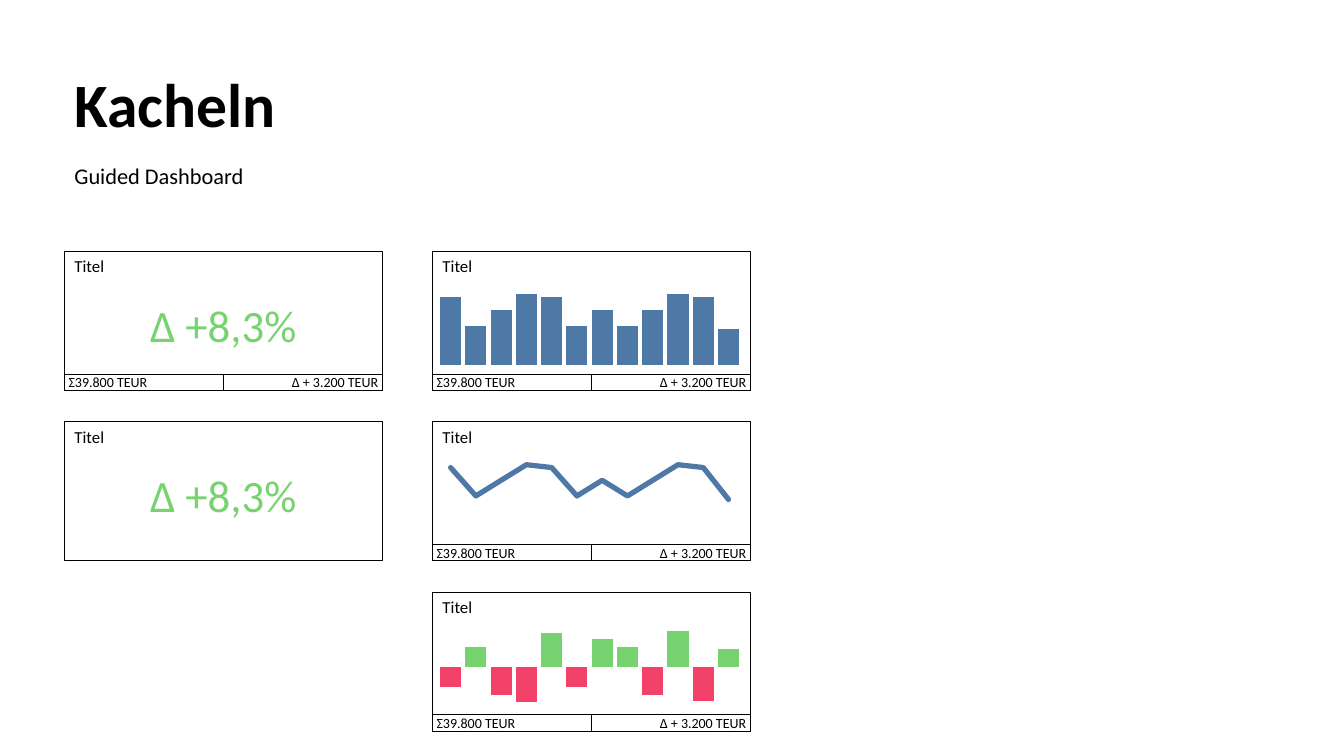
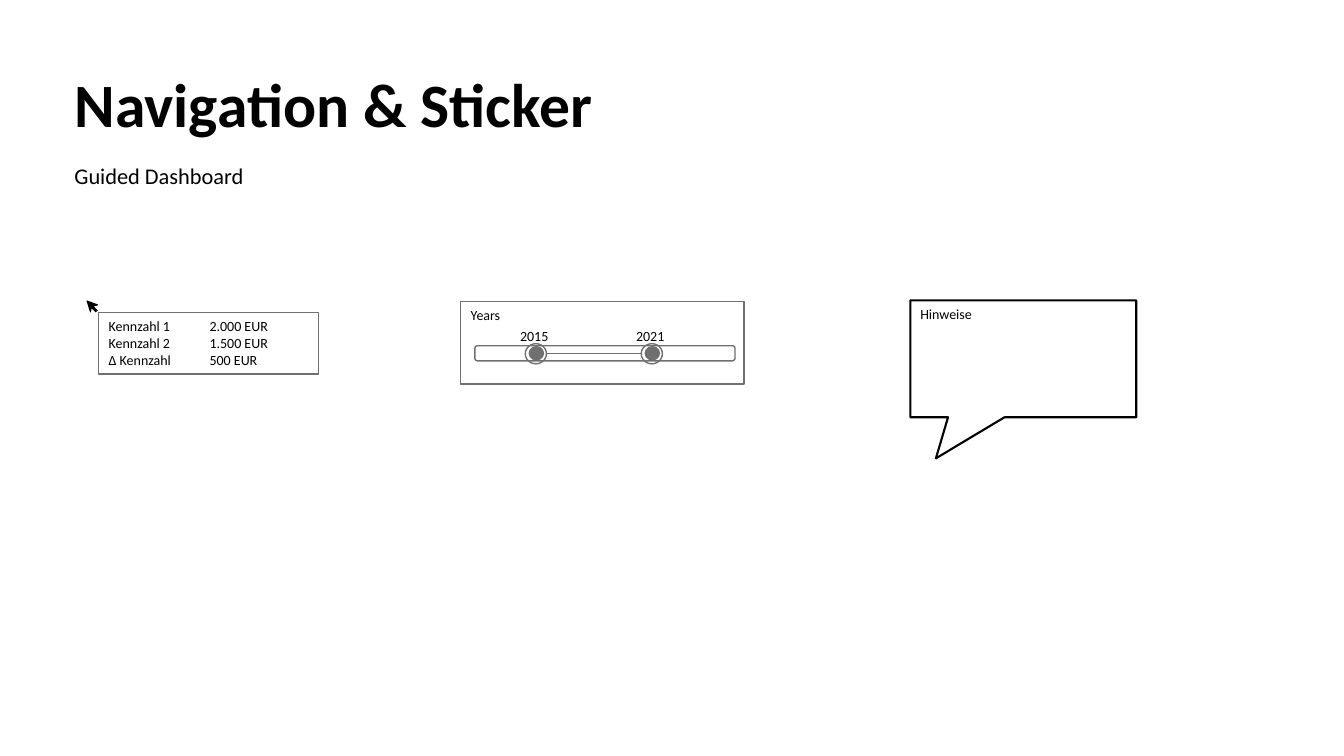
from dataclasses import dataclass
from typing import Any, Optional

import lxml.etree
import pptx
import pptx.chart.data
import pptx.dml.color
import pptx.enum.chart
import pptx.enum.dml
import pptx.enum.shapes
import pptx.enum.text
import pptx.oxml.ns
import pptx.util
from pptx.util import Inches

Preset = pptx.enum.shapes.MSO_SHAPE
ChartType = pptx.enum.chart.XL_CHART_TYPE
Align = pptx.enum.text.PP_ALIGN
Anchor = pptx.enum.text.MSO_ANCHOR
qn = pptx.oxml.ns.qn


# Shared look
@dataclass(frozen=True)
class Theme:
    font: str = "Calibri"
    black: str = "000000"
    white: str = "FFFFFF"
    gray: str = "707070"
    blue: str = "4E79A7"
    green: str = "77D36F"
    red: str = "F24269"
    title_size: float = 44
    subtitle_size: float = 16
    tile_size: float = 12
    small_size: float = 10
    value_size: float = 32
    hairline: float = 0.25
    thin_line: float = 1
    callout_line: float = 1.5
    chart_line: float = 3.75


THEME = Theme()
SUBTITLE = "Guided Dashboard"
TITLE_TOP, SUBTITLE_TOP = 0.75, 1.59
HEADING_LEFT, HEADING_WIDTH = 0.64, 11.5


@dataclass(frozen=True)
class Box:
    left: float
    top: float
    width: float
    height: float

    def lengths(self) -> tuple:
        return tuple(Inches(value) for value in (self.left, self.top, self.width, self.height))


@dataclass(frozen=True)
class TileChart:
    kind: Any
    values: tuple
    color: str
    negative_color: str
    minimum: float = 0
    maximum: float = 110


@dataclass(frozen=True)
class Tile:
    column: int
    row: int
    chart: Optional[TileChart] = None
    footer: bool = True


@dataclass(frozen=True)
class Handle:
    label: str
    left: float


# Tile grid
TILE_WIDTH, TILE_HEIGHT, FOOTER_HEIGHT = 3.15, 1.38, 0.16
GRID_LEFT, GRID_TOP, COLUMN_STEP, ROW_STEP = 0.64, 2.49, 3.65, 1.69
VALUES = (96, 56, 78, 100, 96, 56, 78, 56, 78, 100, 96, 51)
DEVIATIONS = (-56, 56, -78, -100, 96, -56, 78, 56, -78, 100, -96, 51)
TILES = (
    Tile(0, 0),
    Tile(0, 1, footer=False),
    Tile(1, 0, TileChart(ChartType.COLUMN_CLUSTERED, VALUES, THEME.blue, THEME.blue)),
    Tile(1, 1, TileChart(ChartType.LINE, VALUES, THEME.blue, THEME.blue)),
    Tile(1, 2, TileChart(ChartType.COLUMN_CLUSTERED, DEVIATIONS, THEME.green, THEME.red, -110)),
)
HANDLES = (Handle("2021", 6.36), Handle("2015", 5.21))

# Cursor outline in hundredths of an inch
CURSOR = ((97, 308), (93, 304), (97, 303), (97, 302), (86, 298), (86, 299),
          (89, 309), (90, 310), (91, 306), (95, 310))


def rgb(color: str) -> pptx.dml.color.RGBColor:
    return pptx.dml.color.RGBColor.from_string(color)


def set_text(shape: Any, text: str, size: float, color: str = THEME.black,
             align: Any = Align.LEFT, bold: bool = False) -> None:
    shape.text_frame.text = text
    for paragraph in shape.text_frame.paragraphs:
        paragraph.alignment = align
        for run in paragraph.runs:
            run.font.name = THEME.font
            run.font.size = pptx.util.Pt(size)
            run.font.bold = bold
            run.font.color.rgb = rgb(color)


def add_outline(shapes: Any, preset: Any, box: Box, color: str, line_width: float,
                fill: Optional[str] = None) -> Any:
    shape = shapes.add_shape(preset, *box.lengths())
    shape.shadow.inherit = False
    if fill:
        shape.fill.solid()
        shape.fill.fore_color.rgb = rgb(fill)
    else:
        shape.fill.background()
    shape.line.color.rgb = rgb(color)
    shape.line.width = pptx.util.Pt(line_width)
    shape.text_frame.vertical_anchor = Anchor.TOP
    return shape


def add_label(shapes: Any, box: Box, text: str, size: float, color: str = THEME.black,
              align: Any = Align.LEFT, wrap: bool = True) -> Any:
    label = shapes.add_textbox(*box.lengths())
    label.text_frame.word_wrap = wrap
    set_text(label, text, size, color, align)
    return label


def add_titled_slide(presentation: Any, title: str) -> Any:
    slide = presentation.slides.add_slide(presentation.slide_layouts.get_by_name("Title Only"))
    heading = slide.shapes.title
    heading.left, heading.top, heading.width, heading.height = Box(
        HEADING_LEFT, TITLE_TOP, HEADING_WIDTH, 0.64).lengths()
    heading.text_frame.auto_size = pptx.enum.text.MSO_AUTO_SIZE.NONE
    heading.text_frame.vertical_anchor = Anchor.MIDDLE
    set_text(heading, title, THEME.title_size, bold=True)
    heading.text_frame.paragraphs[0].line_spacing = 0.9

    subtitle = add_label(slide.shapes, Box(HEADING_LEFT, SUBTITLE_TOP, HEADING_WIDTH, 0.59),
                         SUBTITLE, THEME.subtitle_size)
    paragraph = subtitle.text_frame.paragraphs[0]
    paragraph.line_spacing = 0.9
    paragraph.space_before = pptx.util.Pt(10)
    return slide


# Charts
def set_plot_layout(chart: Any) -> None:
    plot_area = chart._chartSpace.chart.plotArea
    for old_layout in plot_area.findall(qn("c:layout")):
        plot_area.remove(old_layout)
    layout = lxml.etree.Element(qn("c:layout"))
    manual = lxml.etree.SubElement(layout, qn("c:manualLayout"))
    settings = (("layoutTarget", "inner"), ("xMode", "edge"), ("yMode", "edge"),
                ("x", "0.017"), ("y", "0.076"), ("w", "0.955"), ("h", "0.834"))
    for name, value in settings:
        lxml.etree.SubElement(manual, qn(f"c:{name}")).set("val", value)
    plot_area.insert(0, layout)


def clear_chart_background(chart: Any) -> None:
    properties = lxml.etree.Element(qn("c:spPr"))
    lxml.etree.SubElement(properties, qn("a:noFill"))
    line = lxml.etree.SubElement(properties, qn("a:ln"))
    lxml.etree.SubElement(line, qn("a:noFill"))
    chart._chartSpace.chart.addnext(properties)


def add_tile_chart(shapes: Any, box: Box, content: TileChart) -> None:
    data = pptx.chart.data.CategoryChartData()
    data.categories = [str(number) for number in range(1, len(content.values) + 1)]
    data.add_series("Series 1", content.values)
    chart = shapes.add_chart(content.kind, *box.lengths(), data).chart
    chart.has_legend = False
    chart.has_title = False
    chart.font.name = THEME.font
    chart.font.size = pptx.util.Pt(THEME.small_size)
    chart.font.color.rgb = rgb(THEME.black)
    chart.category_axis.visible = False
    chart.value_axis.visible = False
    chart.value_axis.has_major_gridlines = False
    chart.value_axis.minimum_scale = content.minimum
    chart.value_axis.maximum_scale = content.maximum

    plot = chart.plots[0]
    plot.vary_by_categories = False
    series = plot.series[0]
    if content.kind == ChartType.LINE:
        series.smooth = False
        series.marker.style = pptx.enum.chart.XL_MARKER_STYLE.NONE
        series.format.line.color.rgb = rgb(content.color)
        series.format.line.width = pptx.util.Pt(THEME.chart_line)
        series.format.line._get_or_add_ln().set("cap", "rnd")
    else:
        plot.gap_width = 20
        plot.overlap = -27
        series.invert_if_negative = False
        series.format.fill.solid()
        series.format.fill.fore_color.rgb = rgb(content.color)
        for index, value in enumerate(content.values):
            if value < 0:
                fill = series.points[index].format.fill
                fill.solid()
                fill.fore_color.rgb = rgb(content.negative_color)
    set_plot_layout(chart)
    clear_chart_background(chart)


# Tiles
def add_tile(slide: Any, tile: Tile) -> None:
    shapes = slide.shapes.add_group_shape().shapes
    left = GRID_LEFT + tile.column * COLUMN_STEP
    top = GRID_TOP + tile.row * ROW_STEP
    frame = add_outline(shapes, Preset.RECTANGLE, Box(left, top, TILE_WIDTH, TILE_HEIGHT),
                        THEME.black, THEME.hairline)
    set_text(frame, "Titel", THEME.tile_size)
    footer_top = top + TILE_HEIGHT - FOOTER_HEIGHT
    if tile.footer:
        cell_width = TILE_WIDTH / 2
        cells = (("Σ39.800 TEUR", Align.LEFT), ("Δ + 3.200 TEUR", Align.RIGHT))
        for index, (text, align) in enumerate(cells):
            cell = add_outline(
                shapes, Preset.RECTANGLE,
                Box(left + index * cell_width, footer_top, cell_width, FOOTER_HEIGHT),
                THEME.black, THEME.hairline)
            text_frame = cell.text_frame
            text_frame.margin_left = text_frame.margin_right = Inches(0.04)
            text_frame.margin_top = text_frame.margin_bottom = 0
            set_text(cell, text, THEME.small_size, align=align)
    if tile.chart:
        chart_top = top + 0.29
        add_tile_chart(shapes, Box(left, chart_top, TILE_WIDTH, footer_top - chart_top), tile.chart)
    else:
        add_label(shapes, Box(left + 0.74, top + 0.41, 1.67, 0.64), "Δ +8,3%",
                  THEME.value_size, THEME.green, Align.CENTER, wrap=False)


# Navigation elements
def add_year_slider(slide: Any) -> None:
    shapes = slide.shapes.add_group_shape().shapes
    frame = add_outline(shapes, Preset.RECTANGLE, Box(4.57, 2.99, 2.81, 0.82),
                        THEME.gray, THEME.thin_line)
    set_text(frame, "Years", THEME.small_size)
    add_outline(shapes, Preset.ROUNDED_RECTANGLE, Box(4.71, 3.43, 2.58, 0.15),
                THEME.gray, THEME.thin_line)
    for handle in HANDLES:
        add_outline(shapes, Preset.OVAL, Box(handle.left, 3.41, 0.21, 0.2),
                    THEME.gray, THEME.thin_line)
        add_outline(shapes, Preset.OVAL, Box(handle.left + 0.04, 3.44, 0.14, 0.13),
                    THEME.gray, THEME.thin_line, THEME.gray)
        add_label(shapes, Box(handle.left - 0.15, 3.2, 0.52, 0.27), handle.label, THEME.small_size)
    span = shapes.add_connector(pptx.enum.shapes.MSO_CONNECTOR.STRAIGHT,
                                Inches(5.43), Inches(3.51), Inches(6.36), Inches(3.51))
    span.line.color.rgb = rgb(THEME.gray)
    span.line.width = pptx.util.Pt(THEME.thin_line)
    lxml.etree.SubElement(span._element.spPr, qn("a:effectLst"))


def add_note_callout(slide: Any) -> None:
    callout = add_outline(slide.shapes, Preset.RECTANGULAR_CALLOUT, Box(9.03, 2.98, 2.24, 1.16),
                          THEME.black, THEME.callout_line, THEME.white)
    callout.adjustments[0] = -0.387
    callout.adjustments[1] = 0.852
    fill_color = callout._element.spPr.find(qn("a:solidFill"))[0]
    lxml.etree.SubElement(fill_color, qn("a:alpha")).set("val", "80000")
    set_text(callout, "Hinweise", THEME.small_size)


def add_tooltip(slide: Any) -> None:
    shapes = slide.shapes.add_group_shape().shapes
    builder = shapes.build_freeform(*CURSOR[0], scale=Inches(0.01))
    builder.add_line_segments(CURSOR[1:], close=True)
    cursor = builder.convert_to_shape()
    cursor.shadow.inherit = False
    cursor.fill.solid()
    cursor.fill.fore_color.rgb = rgb(THEME.black)
    cursor.line.fill.background()
    tooltip = add_outline(shapes, Preset.RECTANGLE, Box(0.98, 3.1, 2.18, 0.61),
                          THEME.gray, THEME.thin_line)
    set_text(tooltip, "Kennzahl 1\t2.000 EUR\nKennzahl 2\t1.500 EUR\n∆ Kennzahl\t500 EUR",
             THEME.small_size)


def main() -> None:
    presentation = pptx.Presentation()
    presentation.slide_width, presentation.slide_height = Inches(13.33), Inches(7.5)

    # Tiles slide
    tiles_slide = add_titled_slide(presentation, "Kacheln")
    for tile in TILES:
        add_tile(tiles_slide, tile)

    # Navigation slide
    navigation_slide = add_titled_slide(presentation, "Navigation & Sticker")
    add_year_slider(navigation_slide)
    add_note_callout(navigation_slide)
    add_tooltip(navigation_slide)

    presentation.save("out.pptx")


if __name__ == "__main__":
    main()
